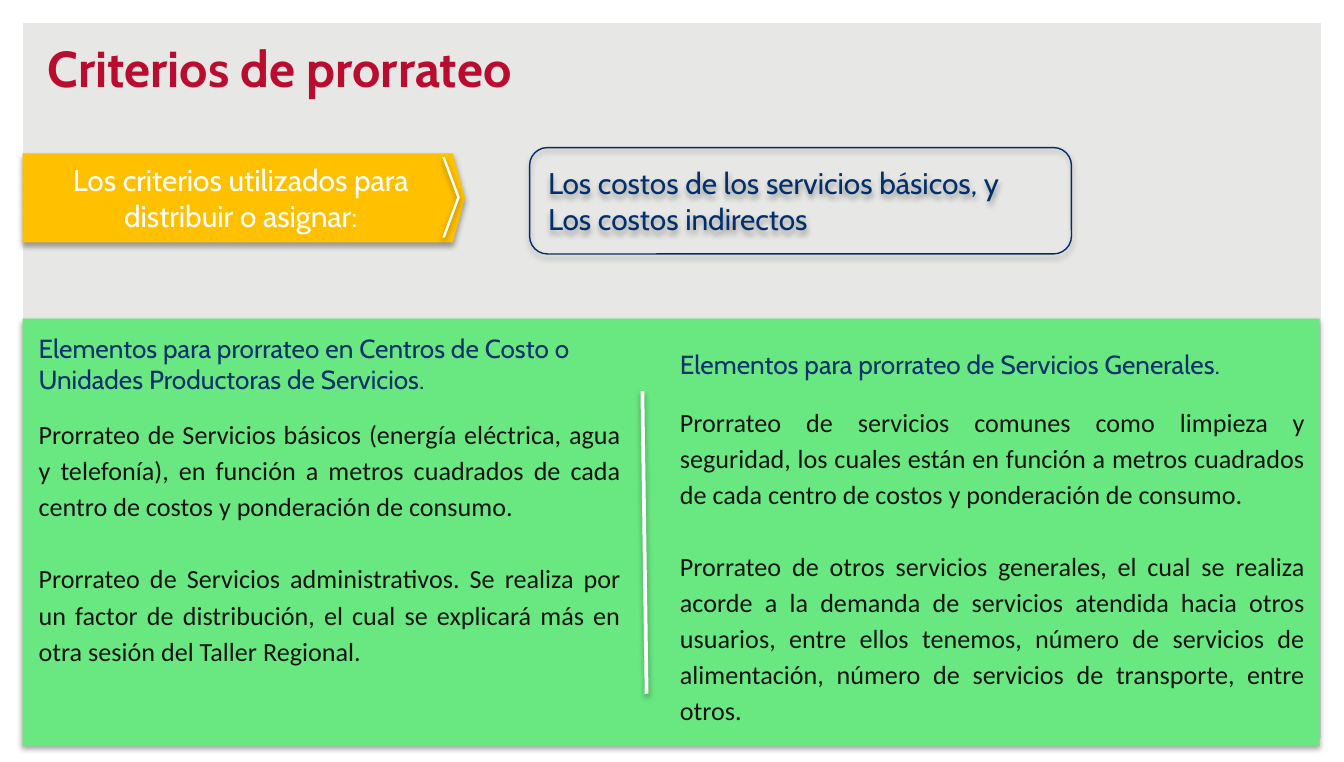
from lxml.etree import SubElement
from pptx import Presentation
from pptx.dml.color import RGBColor
from pptx.enum.shapes import MSO_CONNECTOR, MSO_SHAPE
from pptx.enum.text import MSO_ANCHOR, PP_ALIGN
from pptx.oxml.ns import qn
from pptx.util import Cm, Pt

GREY = RGBColor(0xE7, 0xE7, 0xE5)
WHITE = RGBColor(0xFF, 0xFF, 0xFF)
AMBER = RGBColor(0xFF, 0xC0, 0x00)
GREEN = RGBColor(0x69, 0xE7, 0x81)
RED = RGBColor(0xBA, 0x0C, 0x2F)
NAVY = RGBColor(0x00, 0x2F, 0x6C)
BLACK = RGBColor(0x16, 0x15, 0x13)

TITLE = {"name": "Cabin", "size": Pt(27), "bold": True}
CALLOUT = {"name": "Cabin", "size": Pt(16)}
HEADING = {"name": "Cabin", "size": Pt(14)}
BODY = {"name": "Calibri", "size": Pt(14)}
LEFT = {"alignment": PP_ALIGN.LEFT}
CENTERED = {"alignment": PP_ALIGN.CENTER}
JUSTIFIED = {"alignment": PP_ALIGN.JUSTIFY, "line_spacing": 1.15}

COLUMNS = [
    {
        "heading": "Elementos para prorrateo en Centros de Costo o Unidades Productoras de Servicios.",
        "heading_box": (0.48, 6.15, 11.18, 1.45),
        "body": [
            "Prorrateo de Servicios básicos (energía eléctrica, agua y telefonía), en función a metros cuadrados de cada centro de costos y ponderación de consumo.",
            "Prorrateo de Servicios administrativos. Se realiza por un factor de distribución, el cual se explicará más en otra sesión del Taller Regional.",
        ],
        "body_box": (0.48, 7.7, 11.51, 5.03),
    },
    {
        "heading": "Elementos para prorrateo de Servicios Generales.",
        "heading_box": (12.6, 6.45, 11.18, 0.86),
        "body": [
            "Prorrateo de servicios comunes como limpieza y seguridad, los cuales están en función a metros cuadrados de cada centro de costos y ponderación de consumo.",
            "Prorrateo de otros servicios generales, el cual se realiza acorde a la demanda de servicios atendida hacia otros usuarios, entre ellos tenemos, número de servicios de alimentación, número de servicios de transporte, entre otros.",
        ],
        "body_box": (12.6, 7.47, 12.32, 6.4),
    },
]


def set_attributes(target, values):
    """Set every attribute named in a dict of format values."""
    for name, value in values.items():
        setattr(target, name, value)


def write_text(shape, lines, font, color, layout, anchor, gap=0):
    """Fill a shape with formatted paragraphs separated by a gap in points."""
    frame = shape.text_frame
    set_attributes(frame, {"word_wrap": True, "vertical_anchor": anchor})
    frame.text = "\n".join(lines)
    for index, paragraph in enumerate(frame.paragraphs):
        set_attributes(paragraph, layout)
        paragraph.space_before = Pt(gap if index else 0)
        for run in paragraph.runs:
            set_attributes(run.font, font)
            run.font.color.rgb = color


def add_shadow(shape):
    """Give a shape or connector a soft shadow falling straight down."""
    effects = SubElement(shape._element.spPr, qn("a:effectLst"))
    shadow = SubElement(
        effects, qn("a:outerShdw"), blurRad=str(Pt(3.1)), dist=str(Pt(1.8)),
        dir="5400000", algn="t", rotWithShape="0",
    )
    color = SubElement(shadow, qn("a:srgbClr"), val="000000")
    SubElement(color, qn("a:alpha"), val="35000")


def add_block(slide, kind, box, fill=None, line=None, adjustment=None, shadow=True):
    """Add a preset shape with its fill, outline and shadow."""
    shape = slide.shapes.add_shape(kind, *map(Cm, box))
    if adjustment is not None:
        shape.adjustments[0] = adjustment
    if fill is None:
        shape.fill.background()
    else:
        shape.fill.solid()
        shape.fill.fore_color.rgb = fill
    if line is None:
        shape.line.fill.background()
    else:
        shape.line.color.rgb = line
        shape.line.width = Pt(0.75)
    if shadow:
        add_shadow(shape)
    else:
        shape.shadow.inherit = False
    return shape


def add_text(slide, box, lines, font, color, layout, gap=0):
    """Add a wrapped text box."""
    shape = slide.shapes.add_textbox(*map(Cm, box))
    write_text(shape, lines, font, color, layout, MSO_ANCHOR.TOP, gap)


def add_divider(slide, ends):
    """Add the white line between the two columns."""
    line = slide.shapes.add_connector(MSO_CONNECTOR.STRAIGHT, *map(Cm, ends))
    line.line.color.rgb = WHITE
    line.line.width = Pt(2)
    add_shadow(line)


def format_title(slide, text, box):
    """Place and format the title placeholder."""
    title = slide.shapes.title
    set_attributes(title, dict(zip(("left", "top", "width", "height"), map(Cm, box))))
    write_text(title, [text], TITLE, RED, LEFT, MSO_ANCHOR.BOTTOM)


def main():
    """Build the slide and save it."""
    presentation = Presentation()
    presentation.slide_width, presentation.slide_height = Cm(25.4), Cm(14.4)
    slide = presentation.slides.add_slide(presentation.slide_layouts[5])
    slide.background.fill.solid()
    slide.background.fill.fore_color.rgb = GREY

    add_block(slide, MSO_SHAPE.FRAME, (0, 0, 25.4, 14.4), WHITE, adjustment=0.03, shadow=False)
    format_title(slide, "Criterios de prorrateo", (0.64, 0.56, 22.86, 1.42))

    banner = add_block(slide, MSO_SHAPE.PENTAGON, (0.43, 2.9, 8.36, 1.68), AMBER, adjustment=0.137)
    write_text(banner, ["Los criterios utilizados para distribuir o asignar:"],
               CALLOUT, WHITE, CENTERED, MSO_ANCHOR.MIDDLE)
    add_block(slide, MSO_SHAPE.CHEVRON, (8.36, 2.97, 0.33, 1.52), WHITE, adjustment=0.853)
    costs = add_block(slide, MSO_SHAPE.ROUNDED_RECTANGLE, (10.01, 2.79, 10.24, 2.01), line=NAVY)
    write_text(costs, ["Los costos de los servicios básicos, y", "Los costos indirectos"],
               CALLOUT, NAVY, LEFT, MSO_ANCHOR.MIDDLE)

    add_block(slide, MSO_SHAPE.RECTANGLE, (0.43, 6.02, 24.51, 8.08), GREEN)
    add_divider(slide, (12.14, 7.39, 12.22, 13.11))
    for column in COLUMNS:
        add_text(slide, column["heading_box"], [column["heading"]], HEADING, NAVY, LEFT)
        add_text(slide, column["body_box"], column["body"], BODY, BLACK, JUSTIFIED, gap=19.3)

    presentation.save("out.pptx")


if __name__ == "__main__":
    main()
